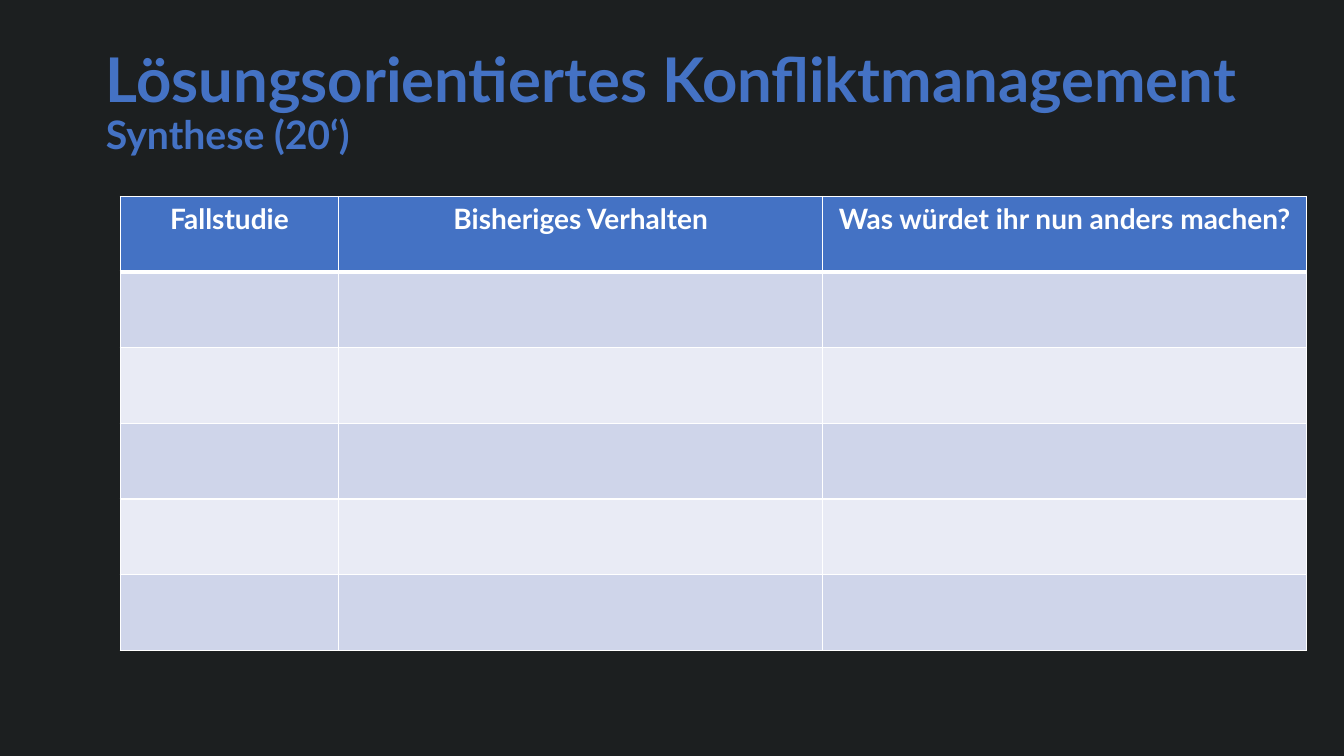
import pptx
import pptx.util
import pptx.dml.color
import pptx.enum.text
import pptx.oxml
import pptx.oxml.ns
from dataclasses import dataclass


@dataclass(frozen=True)
class Theme:
    font: str = "Lato"
    back: str = "1C1F20"
    blue: str = "4472C4"
    white: str = "FFFFFF"
    bands: tuple = ("CFD5EA", "E9EBF5")
    title: int = 44
    sub: int = 28
    head: int = 20


theme = Theme()


def style(run, size, color):
    run.font.name = theme.font
    run.font.size = pptx.util.Pt(size)
    run.font.bold = True
    run.font.color.rgb = pptx.dml.color.RGBColor.from_string(color)


def paint(cell, color, base):
    """Fill a cell and rule its four sides; base is the bottom width in points."""
    cell.fill.solid()
    cell.fill.fore_color.rgb = pptx.dml.color.RGBColor.from_string(color)
    props = cell._tc.get_or_add_tcPr()
    widths = {"lnL": 1, "lnR": 1, "lnT": 1, "lnB": base}
    for spot, (side, width) in enumerate(widths.items()):
        props.insert(spot, pptx.oxml.parse_xml(
            f'<a:{side} {pptx.oxml.ns.nsdecls("a")} w="{pptx.util.Pt(width)}">'
            f'<a:solidFill><a:srgbClr val="{theme.white}"/></a:solidFill></a:{side}>'))


deck = pptx.Presentation()
deck.slide_width = pptx.util.Inches(13.33)
deck.slide_height = pptx.util.Inches(7.5)
unit = deck.slide_height / 10  # one table row

slide = deck.slides.add_slide(deck.slide_layouts[5])
slide.background.fill.solid()
slide.background.fill.fore_color.rgb = pptx.dml.color.RGBColor.from_string(theme.back)

# Title with its subtitle on a second line
title = slide.shapes.title
title.left, title.top = int(1.4 * unit), int(1.07 * unit)
title.width, title.height = int(15.04 * unit), int(1.63 * unit)
frame = title.text_frame
frame.auto_size = pptx.enum.text.MSO_AUTO_SIZE.NONE
frame.word_wrap = True
frame.vertical_anchor = pptx.enum.text.MSO_ANCHOR.BOTTOM
frame.margin_left = frame.margin_right = frame.margin_top = 0
frame.margin_bottom = int(0.61 * unit)
line = frame.paragraphs[0]
line.text = "Lösungsorientiertes Konfliktmanagement\vSynthese (20‘)"
line.alignment = pptx.enum.text.PP_ALIGN.LEFT
line.line_spacing = 0.9
for run, size in zip(line.runs, (theme.title, theme.sub)):
    style(run, size, theme.blue)

# Table with a header and empty rows to fill in
heads = ("Fallstudie", "Bisheriges Verhalten", "Was würdet ihr nun anders machen?")
spans = (2.89, 6.4, 6.4)
rows = 6
table = slide.shapes.add_table(
    rows, len(heads), int(1.59 * unit), int(2.6 * unit),
    int(sum(spans) * unit), int(rows * unit)).table
for col, span in zip(table.columns, spans):
    col.width = int(span * unit)

for cell, text in zip(table.rows[0].cells, heads):
    paint(cell, theme.blue, 3)
    cell.text_frame.text = text
    label = cell.text_frame.paragraphs[0]
    label.alignment = pptx.enum.text.PP_ALIGN.CENTER
    style(label.runs[0], theme.head, theme.white)

for row in range(1, rows):
    for cell in table.rows[row].cells:
        paint(cell, theme.bands[(row - 1) % 2], 1)

deck.save("out.pptx")
